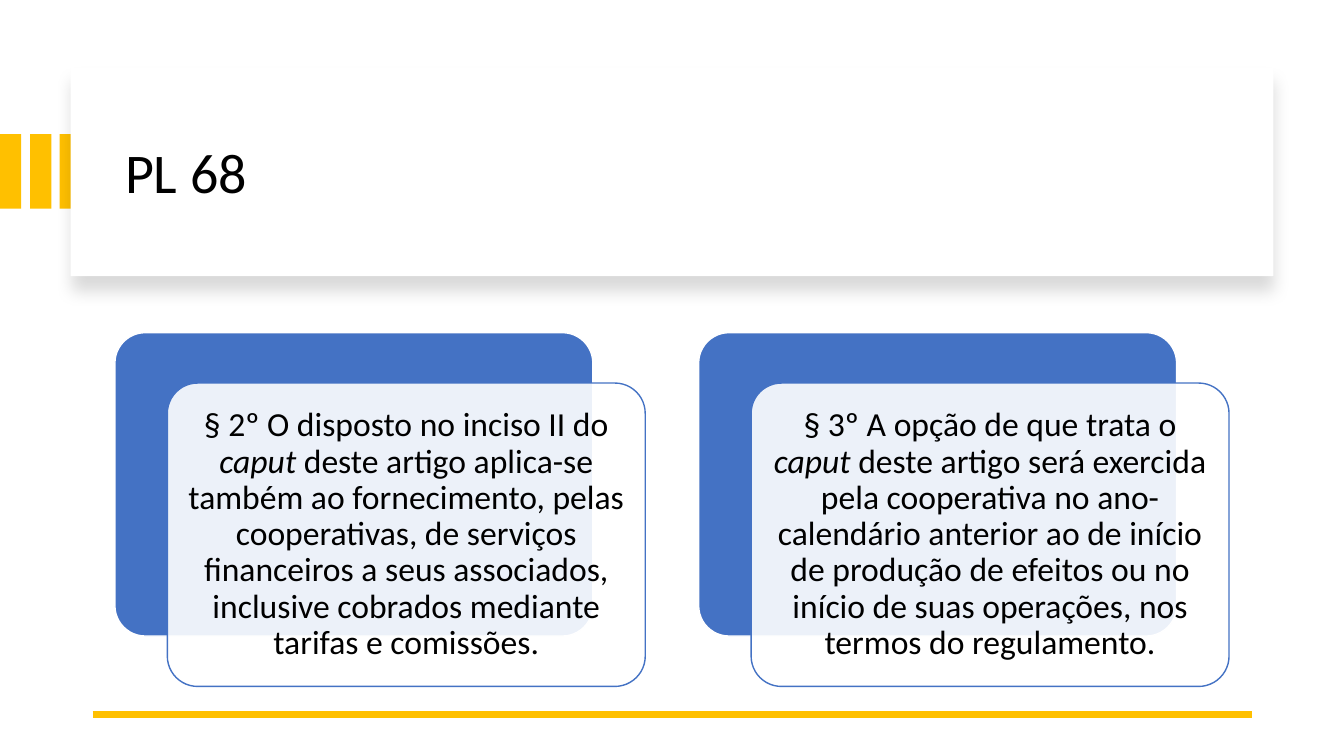
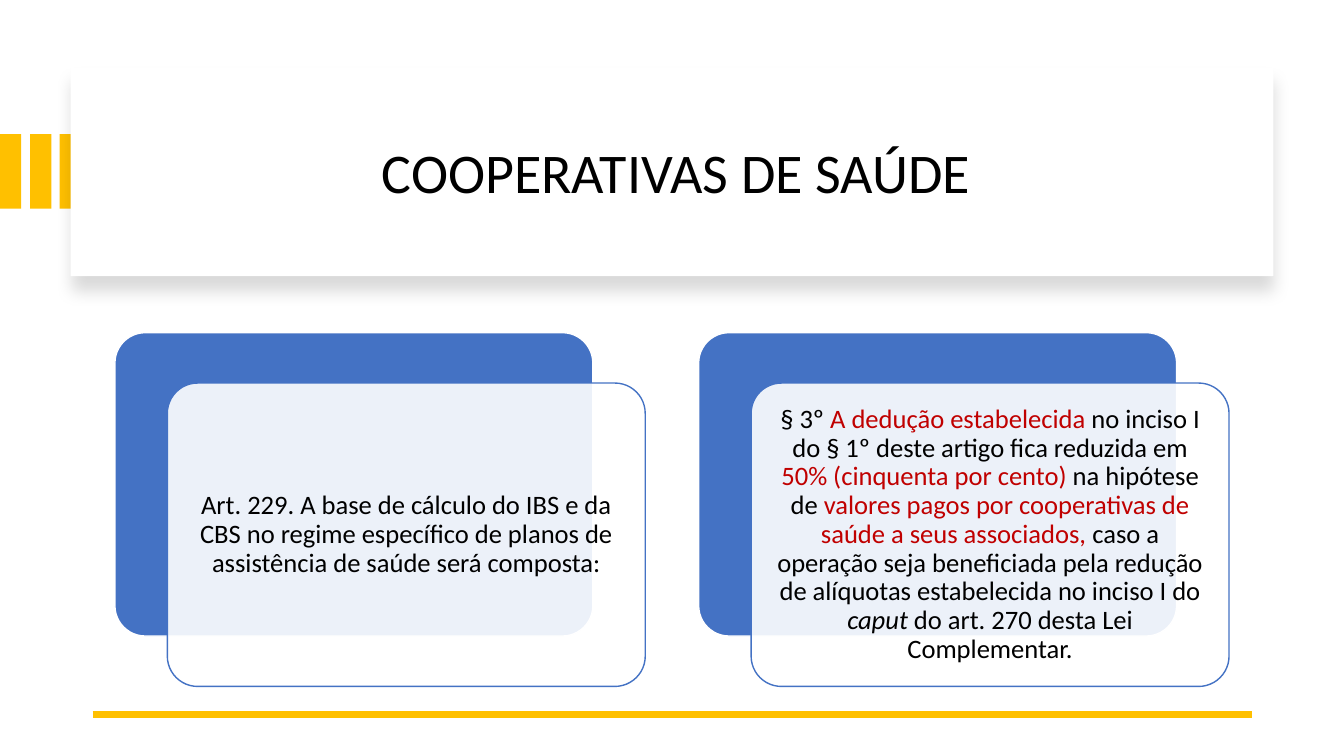
from lxml import etree
from pptx import Presentation
from pptx.dml.color import RGBColor
from pptx.enum.shapes import MSO_CONNECTOR as CONN, MSO_SHAPE as SHAPE
from pptx.enum.text import MSO_ANCHOR as ANCHOR, MSO_AUTO_SIZE as AUTO, PP_ALIGN as ALIGN
from pptx.oxml.ns import qn
from pptx.util import Emu, Pt

PX = 9144  # EMU per px, 100 px to the inch
FONT = "Calibri"
COLORS = {
    "white": "FFFFFF",
    "black": "000000",
    "gold": "FFC000",
    "blue": "4472C4",
    "red": "C00000",
}
HEADER = (70, 67, 1193, 207)
TITLE_INSET = (44, 22, 1113, 170)
PANELS = (114, 330, 1105, 351)
PANEL_STEP = 579
CARD = (474, 301)
CARD_OFFSET = (52, 50)


def px(*values):
    return [Emu(v * PX) for v in values]


def rgb(name):
    return RGBColor.from_string(COLORS[name])


def add_box(slide, kind, box, fill, line=None):
    sp = slide.shapes.add_shape(kind, *px(*box))
    sp.shadow.inherit = False
    sp.fill.solid()
    sp.fill.fore_color.rgb = rgb(fill)
    if line:
        sp.line.color.rgb = rgb(line)
        sp.line.width = Pt(1)
    else:
        sp.line.fill.background()
    return sp


def set_alpha(color, percent):
    etree.SubElement(color, qn("a:alpha")).set("val", str(percent * 1000))


def add_drop_shadow(sp):
    effects = sp._element.spPr.find(qn("a:effectLst"))
    shadow = etree.SubElement(
        effects, qn("a:outerShdw"), blurRad=str(Pt(11)), dist=str(Pt(10)),
        dir=str(90 * 60000), algn="t", rotWithShape="0")
    color = etree.SubElement(shadow, qn("a:srgbClr"), val=COLORS["black"])
    set_alpha(color, 15)


def write(tf, runs, size, align):
    """Fill the frame with one paragraph of (text, style) runs."""
    tf.word_wrap = True
    tf.auto_size = AUTO.NONE
    tf.vertical_anchor = ANCHOR.MIDDLE
    p = tf.paragraphs[0]
    p.alignment = align
    p.line_spacing = 0.9
    for text, style in runs:
        r = p.add_run()
        r.text = text
        r.font.name = FONT
        r.font.size = Pt(size)
        r.font.italic = style == "italic"
        r.font.color.rgb = rgb("red" if style == "red" else "black")


def add_header(slide, box, title, align):
    x, y, w, h = box
    for i in range(3):
        add_box(slide, SHAPE.RECTANGLE, (round(i * 29.5), y + 66, 21, 74), "gold")
    add_drop_shadow(add_box(slide, SHAPE.RECTANGLE, box, "white"))

    sp = slide.shapes.title
    slide.shapes._spTree.append(sp._element)  # bring the title above its card
    dx, dy, tw, th = TITLE_INSET
    sp.left, sp.top, sp.width, sp.height = px(x + dx, y + dy, tw, th)
    write(sp.text_frame, [(title, None)], 40, align)


def add_footer_rule(slide):
    line = slide.shapes.add_connector(CONN.STRAIGHT, *px(92, 709, 1242, 709))
    line.line.color.rgb = rgb("gold")
    line.line.width = Pt(4.5)
    etree.SubElement(line._element.spPr, qn("a:effectLst"))


def add_panel(slide, x, y, runs, size, inset):
    """Blue card with a translucent text card overlapping it."""
    dx, dy = CARD_OFFSET
    back = add_box(slide, SHAPE.ROUNDED_RECTANGLE, (x, y, *CARD), "blue", "white")
    front = add_box(slide, SHAPE.ROUNDED_RECTANGLE, (x + dx, y + dy, *CARD),
                    "white", "blue")
    for sp in (back, front):
        sp.adjustments[0] = 0.1
    set_alpha(front._element.spPr.find(qn("a:solidFill"))[0], 90)
    tf = front.text_frame
    tf.margin_left = tf.margin_top = tf.margin_right = tf.margin_bottom = Emu(inset * PX)
    write(tf, runs, size, ALIGN.CENTER)


def add_panels_slide(prs, title, align, panels, size, inset):
    slide = prs.slides.add_slide(prs.slide_layouts[5])
    add_header(slide, HEADER, title, align)
    add_footer_rule(slide)
    left, top = PANELS[:2]
    for i, runs in enumerate(panels):
        add_panel(slide, left + i * PANEL_STEP, top, runs, size, inset)


def main():
    prs = Presentation()
    prs.slide_width, prs.slide_height = px(1333, 750)

    add_panels_slide(prs, "PL 68", ALIGN.LEFT, [
        [("§ 2º O disposto no inciso II do ", None),
         ("caput ", "italic"),
         ("deste artigo aplica-se também ao fornecimento, pelas cooperativas, "
          "de serviços financeiros a seus associados, inclusive cobrados "
          "mediante tarifas e comissões.", None)],
        [("§ 3º A opção de que trata o ", None),
         ("caput ", "italic"),
         ("deste artigo será exercida pela cooperativa no ano-calendário "
          "anterior ao de início de produção de efeitos ou no início de suas "
          "operações, nos termos do regulamento.", None)],
    ], size=24, inset=10)

    add_panels_slide(prs, "COOPERATIVAS DE SAÚDE", ALIGN.CENTER, [
        [("Art. 229. A base de cálculo do IBS e da CBS no regime específico "
          "de planos de assistência de saúde será composta:", None)],
        [("§ 3º ", None),
         ("A dedução estabelecida ", "red"),
         ("no inciso I do § 1º deste artigo fica reduzida em ", None),
         ("50% (cinquenta por cento) ", "red"),
         ("na hipótese de ", None),
         ("valores pagos por cooperativas de saúde a seus associados, ", "red"),
         ("caso a operação seja beneficiada pela redução de alíquotas "
          "estabelecida no inciso I do ", None),
         ("caput ", "italic"),
         ("do art. 270 desta Lei Complementar.", None)],
    ], size=19, inset=8)

    prs.save("out.pptx")


if __name__ == "__main__":
    main()
